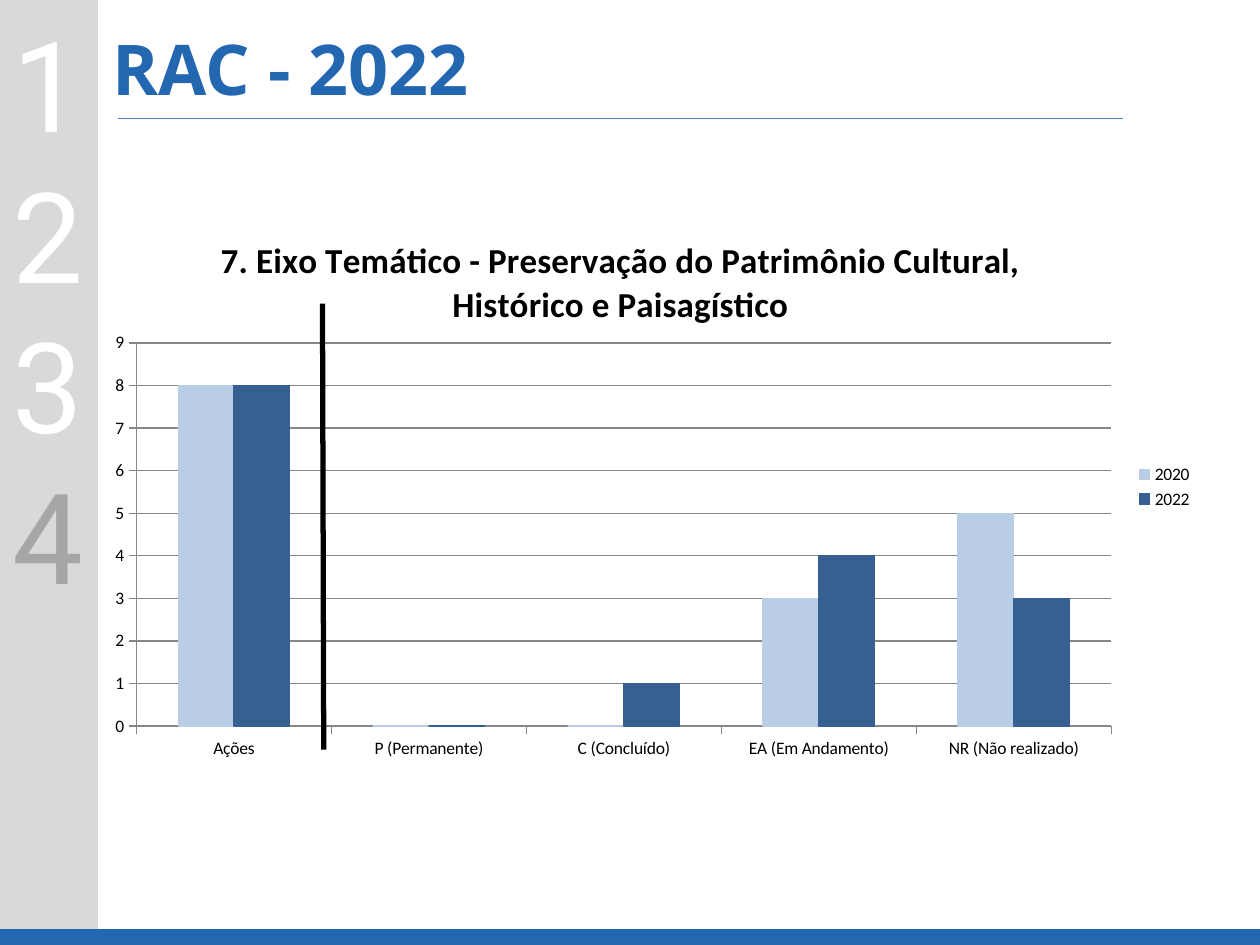
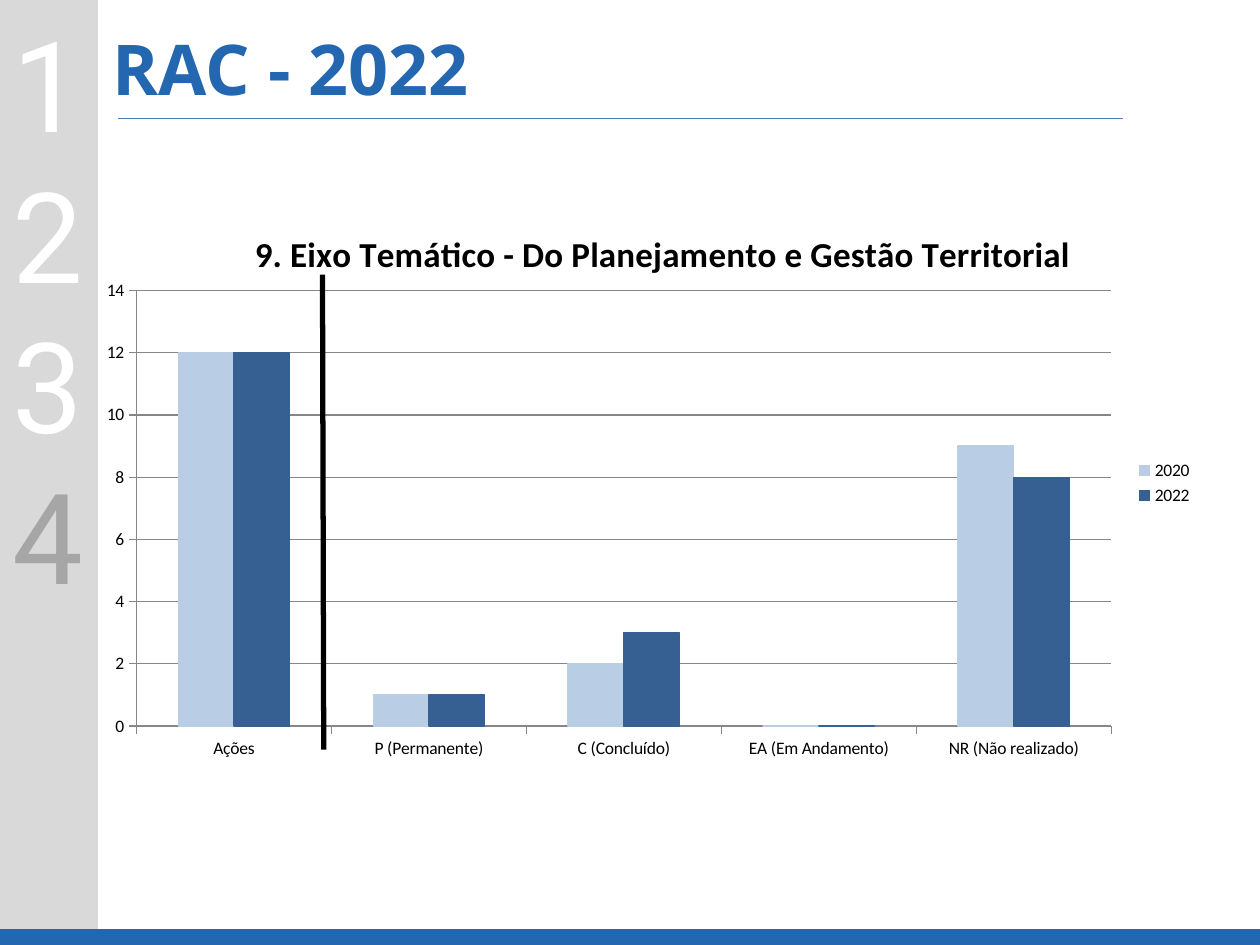
from pptx import Presentation
from pptx.chart.data import CategoryChartData
from pptx.dml.color import RGBColor
from pptx.enum.chart import XL_CHART_TYPE as ChartType, XL_LEGEND_POSITION as LegendPosition
from pptx.enum.chart import XL_TICK_MARK as TickMark
from pptx.enum.shapes import MSO_CONNECTOR as Connector, MSO_SHAPE as Shape
from pptx.enum.text import MSO_ANCHOR as Anchor
from pptx.oxml import parse_xml
from pptx.oxml.ns import nsdecls, qn
from pptx.util import Pt

COLORS = {
    "white": "FFFFFF", "black": "000000", "sidebar": "D9D9D9", "current": "A6A6A6",
    "brand": "2367B1", "rule": "4B7EBC", "grid": "878787",
    "2020": "B9CDE5", "2022": "376092",
}
CATEGORIES = ["Ações", "P (Permanente)", "C (Concluído)", "EA (Em Andamento)", "NR (Não realizado)"]
PLOT_LEFT, PLOT_RIGHT, PLOT_BOTTOM = 78, 635, 415
AXES = [
    {
        "title": "7. Eixo Temático - Preservação do Patrimônio Cultural, Histórico e Paisagístico",
        "title_at": (122.5, 131), "box": (54, 116.5, 635, 323.5), "plot_top": 196,
        "maximum": 9, "step": 1, "divider_top": 173.5,
        "values": {"2020": (8, 0, 0, 3, 5), "2022": (8, 0, 1, 4, 3)},
    },
    {
        "title": "9. Eixo Temático - Do Planejamento e Gestão Territorial",
        "title_at": (142, 127.5), "box": (48, 111.5, 641, 329), "plot_top": 166,
        "maximum": 14, "step": 2, "divider_top": 157,
        "values": {"2020": (12, 1, 2, 0, 9), "2022": (12, 1, 3, 0, 8)},
    },
]


def color(name):
    """Return the named palette colour."""
    return RGBColor.from_string(COLORS[name])


def add_band(page, box, fill):
    """Add a plain filled rectangle."""
    band = page.shapes.add_shape(Shape.RECTANGLE, *map(Pt, box))
    band.shadow.inherit = False
    band.fill.solid()
    band.fill.fore_color.rgb = color(fill)
    band.line.fill.background()


def add_line(page, start, end, stroke, width):
    """Add a straight line without a shadow."""
    line = page.shapes.add_connector(Connector.STRAIGHT, *map(Pt, start + end))
    line.line.color.rgb = color(stroke)
    line.line.width = Pt(width)
    line.element.spPr.append(parse_xml(f"<a:effectLst {nsdecls('a')}/>"))


def add_text(page, box, text, font_name, size, text_color, bold=False):
    """Add a wrapped one-paragraph text box and return its frame."""
    frame = page.shapes.add_textbox(*map(Pt, box)).text_frame
    frame.word_wrap = True
    para = frame.paragraphs[0]
    para.text = text
    para.font.name, para.font.size, para.font.bold = font_name, Pt(size), bold
    para.font.color.rgb = color(text_color)
    return frame


def add_sidebar(page, box, current=4):
    """Draw the grey column of section numbers."""
    left, top, width, height = box
    add_band(page, box, "sidebar")
    for number in range(1, 5):
        digit_box = (left, top + 86.2 * (number - 1), width - 2, 94.5)
        digit_color = "current" if number == current else "white"
        add_text(page, digit_box, str(number), "Roboto", 72, digit_color)


def add_heading(page, box, text):
    """Draw the slide title and the rule under it."""
    left, top, width, height = box
    frame = add_text(page, box, text, "Open Sans", 40, "brand", bold=True)
    frame.vertical_anchor = Anchor.MIDDLE
    frame.margin_left = frame.margin_right = Pt(4.3)
    frame.margin_top = frame.margin_bottom = Pt(2.2)
    frame.paragraphs[0].line_spacing = 0.9
    rule_top = top + height - 3.7
    add_line(page, (left + 7.7, rule_top), (left + width - 2.3, rule_top), "rule", 0.75)


def set_layout(parent, index, target="", **fractions):
    """Place a chart part by fractions of the chart area."""
    for old in parent.findall(qn("c:layout")):
        parent.remove(old)
    modes = "".join(f'<c:{axis}Mode val="edge"/>' for axis in "xy")
    sizes = "".join(f'<c:{key} val="{value:.4f}"/>' for key, value in fractions.items())
    parent.insert(index, parse_xml(
        f"<c:layout {nsdecls('c')}><c:manualLayout>{target}{modes}{sizes}</c:manualLayout></c:layout>"))


def add_column_chart(page, box, axis):
    """Draw the clustered columns of one thematic axis."""
    left, top, width, height = box
    data = CategoryChartData()
    data.categories = CATEGORIES
    for year, values in axis["values"].items():
        data.add_series(year, values)
    chart = page.shapes.add_chart(ChartType.COLUMN_CLUSTERED, *map(Pt, box), data).chart
    chart.font.name, chart.font.size = "Calibri", Pt(10)
    chart.font.color.rgb = color("black")

    chart.has_title = True
    title = chart.chart_title
    title.text_frame.text = axis["title"]
    font = title.text_frame.paragraphs[0].font
    font.name, font.size, font.bold = "Calibri", Pt(20), True
    font.color.rgb = color("black")
    title_left, title_top = axis["title_at"]
    set_layout(title.element, 1, x=(title_left - left) / width, y=(title_top - top) / height)

    chart.has_legend = True
    chart.legend.position = LegendPosition.RIGHT
    chart.legend.include_in_layout = False

    plot = chart.plots[0]
    plot.gap_width, plot.overlap, plot.vary_by_categories = 150, 0, False
    for series in plot.series:
        series.format.fill.solid()
        series.format.fill.fore_color.rgb = color(series.name)
        series.format.line.color.rgb = color(series.name)
        series.format.line.width = Pt(0.75)

    scale = chart.value_axis
    scale.minimum_scale, scale.maximum_scale, scale.major_unit = 0, axis["maximum"], axis["step"]
    scale.has_major_gridlines = True
    for part in (scale, chart.category_axis, scale.major_gridlines):
        part.format.line.color.rgb = color("grid")
        part.format.line.width = Pt(0.75)
    for part in (scale, chart.category_axis):
        part.major_tick_mark = TickMark.OUTSIDE

    plot_area = chart.element.find(qn("c:chart")).find(qn("c:plotArea"))
    set_layout(
        plot_area, 0, '<c:layoutTarget val="inner"/>',
        x=(PLOT_LEFT - left) / width, y=(axis["plot_top"] - top) / height,
        w=(PLOT_RIGHT - PLOT_LEFT) / width, h=(PLOT_BOTTOM - axis["plot_top"]) / height)


def add_axis_slide(deck, axis):
    """Build the slide of one thematic axis."""
    page = deck.slides.add_slide(deck.slide_layouts[6])
    add_sidebar(page, (0, 0, 56, 531))
    add_band(page, (0, 531, 720, 9), "brand")
    add_column_chart(page, axis["box"], axis)
    add_line(page, (184.3, axis["divider_top"]), (185, 428.4), "black", 3)
    add_heading(page, (60, 11.5, 584, 60), "RAC - 2022")


def main():
    """Build and save the deck."""
    deck = Presentation()
    deck.slide_width, deck.slide_height = Pt(720), Pt(540)
    for axis in AXES:
        add_axis_slide(deck, axis)
    deck.save("out.pptx")


if __name__ == "__main__":
    main()
